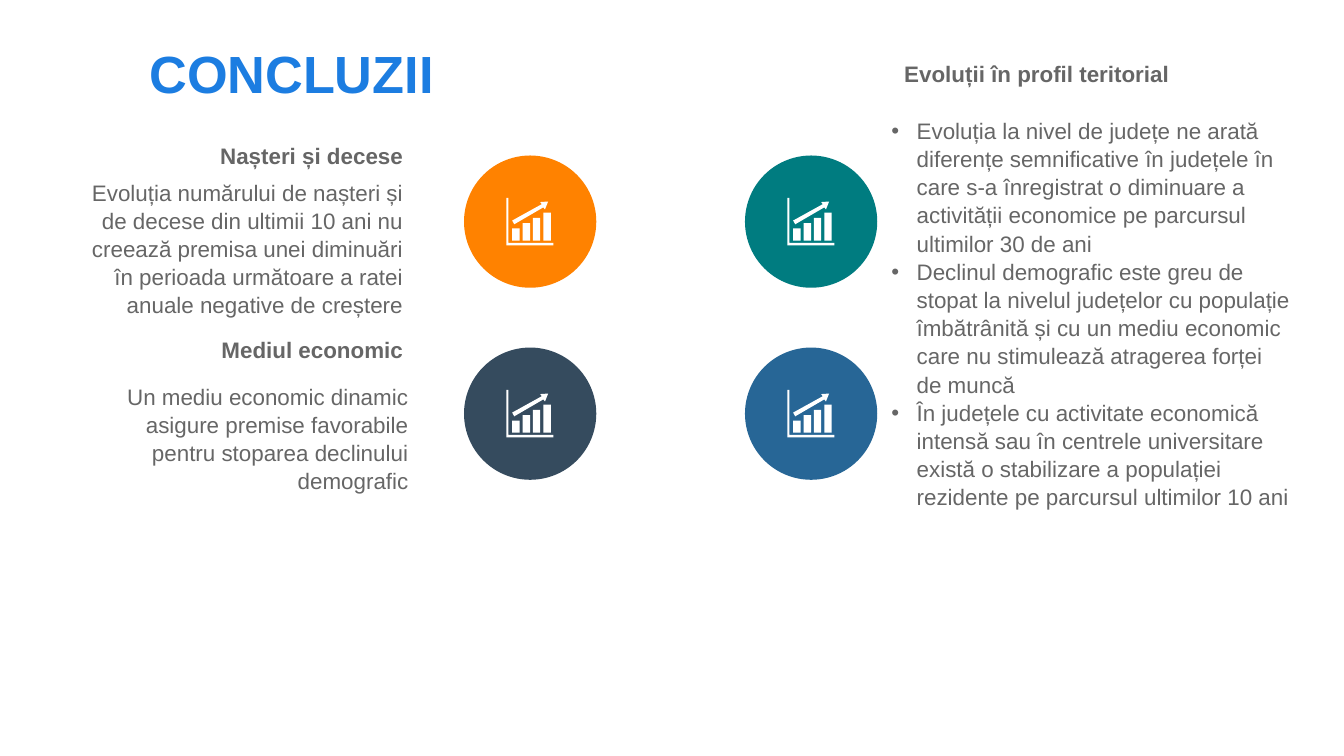
from pptx import Presentation
from pptx.dml.color import RGBColor
from pptx.enum.shapes import MSO_SHAPE
from pptx.enum.text import MSO_ANCHOR, PP_ALIGN
from pptx.util import Cm, Pt
from lxml.etree import SubElement
from pptx.oxml.ns import qn

BLUE, GREY, WHITE = "1C7DE1", "666666", "FFFFFF"
FONT = "Arial"
LINE_HEIGHT = 1.05

FINDINGS = [
    "Evoluția la nivel de județe ne arată diferențe semnificative în județele în care "
    "s-a înregistrat o diminuare a activității economice pe parcursul ultimilor 30 de ani",
    "Declinul demografic este greu de stopat la nivelul județelor cu populație îmbătrânită "
    "și cu un mediu economic care nu stimulează atragerea forței de muncă",
    "În județele cu activitate economică intensă sau în centrele universitare există o "
    "stabilizare a populației rezidente pe parcursul ultimilor 10 ani",
]
BIRTHS = ("Evoluția numărului de nașteri și de decese din ultimii 10 ani nu creează premisa "
          "unei diminuări în perioada următoare a ratei anuale negative de creștere")
ECONOMY = ("Un mediu economic dinamic asigure premise favorabile pentru stoparea "
           "declinului demografic")


def color(hex_value):
    return RGBColor.from_string(hex_value)


def place(shape, left, top, width, height):
    shape.left, shape.top = Cm(left), Cm(top)
    shape.width, shape.height = Cm(width), Cm(height)


def format_runs(paragraph, size=12, bold=False, hex_value=GREY):
    for run in paragraph.runs:
        run.font.name, run.font.size, run.font.bold = FONT, Pt(size), bold
        run.font.color.rgb = color(hex_value)


def add_text(slide, text, left, top, width, height, align=PP_ALIGN.LEFT, bold=False):
    box = slide.shapes.add_textbox(Cm(left), Cm(top), Cm(width), Cm(height))
    box.text_frame.word_wrap = True
    paragraph = box.text_frame.paragraphs[0]
    paragraph.text = text
    paragraph.alignment = align
    paragraph.line_spacing = LINE_HEIGHT
    format_runs(paragraph, bold=bold)


def add_heading(slide, left, top, width, height):
    title = slide.shapes.title
    place(title, left, top, width, height)
    title.text_frame.text = "CONCLUZII"
    title.text_frame.vertical_anchor = MSO_ANCHOR.MIDDLE
    paragraph = title.text_frame.paragraphs[0]
    paragraph.alignment = PP_ALIGN.JUSTIFY
    format_runs(paragraph, 28, True, BLUE)


def add_topic(slide, heading, body, left, top, body_shift, body_drop, body_height):
    """Right-aligned heading with its explanation below."""
    width = 6.6
    add_text(slide, heading, left, top, width, 0.77, PP_ALIGN.RIGHT, True)
    add_text(slide, body, left + body_shift, top + body_drop, width, body_height,
             PP_ALIGN.RIGHT)


def add_territory(slide, left, top, width, height):
    """Heading with the bulleted findings below."""
    add_text(slide, "Evoluții în profil teritorial", left + 0.25, top, width - 0.28, 0.77,
             bold=True)
    findings = slide.placeholders[1]
    place(findings, left, top + 1.07, width, height - 1.07)
    findings.text_frame.text = "\n".join(FINDINGS)
    for paragraph in findings.text_frame.paragraphs:
        properties = paragraph._p.get_or_add_pPr()
        properties.set("marL", str(Cm(0.48)))
        properties.set("indent", str(-Cm(0.48)))
        SubElement(properties, qn("a:buFont")).set("typeface", FONT)
        SubElement(properties, qn("a:buChar")).set("char", "•")
        paragraph.space_before = Pt(0)
        paragraph.line_spacing = LINE_HEIGHT
        format_runs(paragraph)


def fill_plain(shape, hex_value):
    shape.shadow.inherit = False
    shape.fill.solid()
    shape.fill.fore_color.rgb = color(hex_value)
    shape.line.fill.background()


def add_growth_icon(slide, left, top):
    """Growth chart outline, in hundredths of a centimetre."""
    axes = [(0, 0), (4, 0), (4, 85), (89, 85), (89, 90), (0, 90)]
    arrow = [(64, 8), (79, 7), (73, 22), (70, 18), (15, 50), (11, 43), (67, 12)]
    bars = []
    for step in range(4):
        x, y = 11 + 19.7 * step, 58 - 10 * step
        bars.append([(x, y), (x + 14, y), (x + 14, 81), (x, 81)])

    builder = slide.shapes.build_freeform(*axes[0], scale=Cm(0.01))
    builder.add_line_segments(axes[1:], close=True)
    for outline in [arrow, *bars]:
        builder.move_to(*outline[0])
        builder.add_line_segments(outline[1:], close=True)
    fill_plain(builder.convert_to_shape(Cm(left), Cm(top)), WHITE)


def add_badges(slide, left, top):
    """Two by two grid of round badges."""
    size, column_step, row_step, inset = 2.5, 5.31, 3.63, 0.8
    for index, hex_value in enumerate(["FF8200", "007C80", "354B5E", "276696"]):
        row, column = divmod(index, 2)
        x, y = left + column * column_step, top + row * row_step
        badge = slide.shapes.add_shape(MSO_SHAPE.OVAL, Cm(x), Cm(y), Cm(size), Cm(size))
        fill_plain(badge, hex_value)
        add_growth_icon(slide, x + inset, y + inset)


def main():
    presentation = Presentation()
    presentation.slide_width, presentation.slide_height = Cm(25.4), Cm(14.29)
    slide = presentation.slides.add_slide(presentation.slide_layouts[1])

    add_heading(slide, 2.57, 0.48, 14.02, 1.8)
    add_badges(slide, 8.77, 2.94)
    add_territory(slide, 16.59, 0.99, 8.08, 9.02)
    add_topic(slide, "Nașteri și decese", BIRTHS, 1.27, 2.54, 0, 0.69, 2.82)
    add_topic(slide, "Mediul economic", ECONOMY, 1.27, 6.2, 0.1, 0.89, 2.31)
    presentation.save("out.pptx")


if __name__ == "__main__":
    main()
